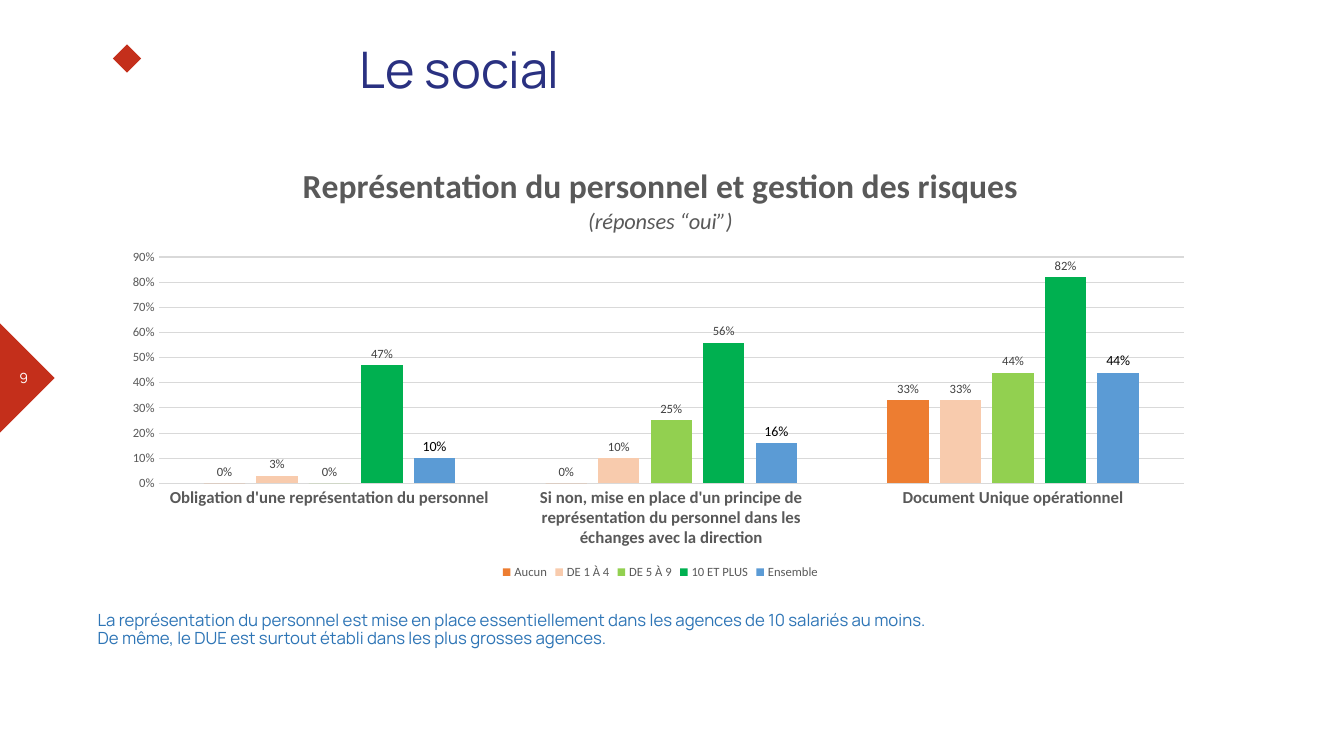
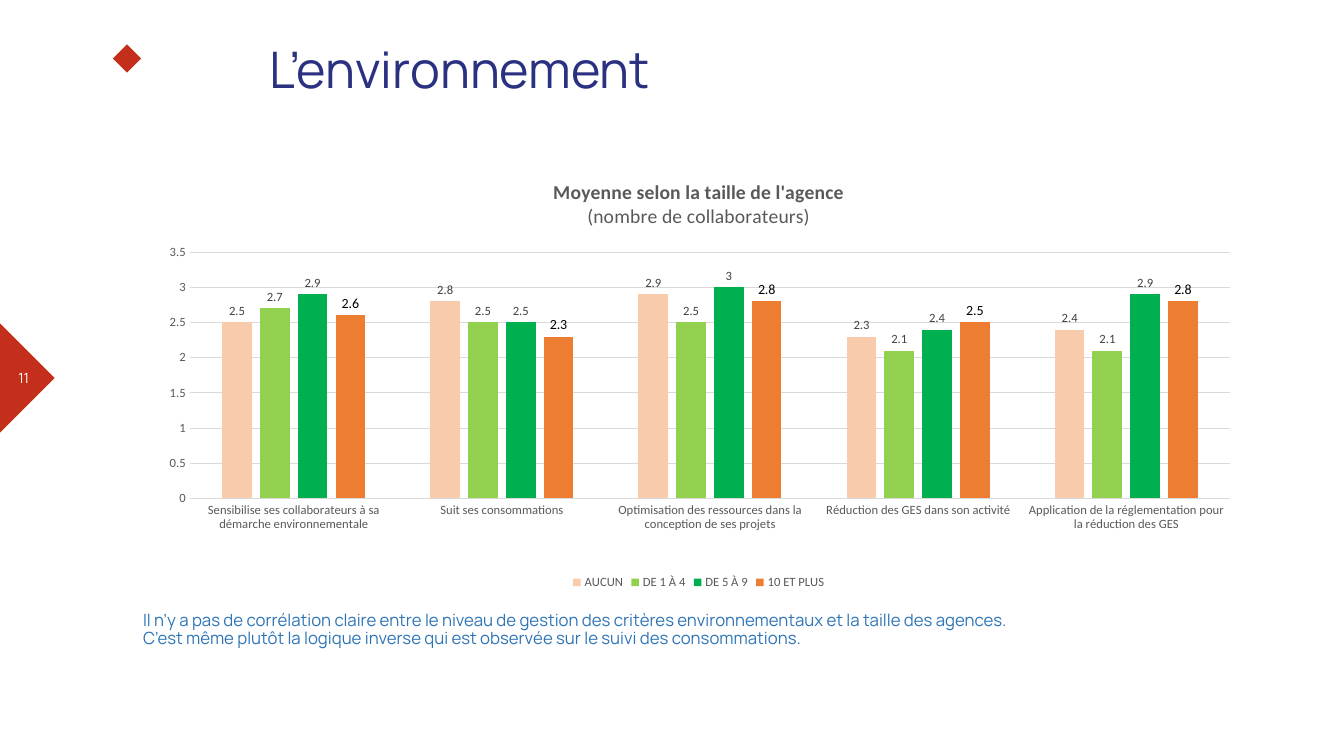
from lxml import etree
from pptx import Presentation
from pptx.chart.data import CategoryChartData
from pptx.dml.color import RGBColor
from pptx.enum.chart import (XL_CHART_TYPE, XL_LABEL_POSITION as LABEL,
                             XL_LEGEND_POSITION as LEGEND, XL_TICK_MARK as TICK)
from pptx.enum.shapes import MSO_SHAPE as SHAPE
from pptx.enum.text import MSO_ANCHOR as ANCHOR, PP_ALIGN as ALIGN
from pptx.oxml.ns import qn
from pptx.util import Inches, Pt

C = {"red": "C42F1B", "navy": "2A3181", "blue": "2E75B6", "white": "FFFFFF",
     "grey": "595959", "label": "404040", "rule": "D9D9D9", "black": "000000",
     "orange": "ED7D31", "peach": "F8CBAD", "lime": "92D050", "green": "00B050",
     "sky": "5B9BD5"}
TEXT_FONT, CHART_FONT = "Manrope", "Calibri"

TITLE = {"size": 36, "color": "navy"}
COMMENT = {"size": 12, "color": "blue"}
NUMBER = {"size": 10, "color": "white"}
SMALL = {"size": 9, "color": "grey", "name": CHART_FONT, "bold": False}
SERIES_LABEL = SMALL | {"color": "label"}
TOTAL_LABEL = SMALL | {"size": 10, "color": "black"}


def rgb(name):
    return RGBColor.from_string(C[name])


def set_font(font, fmt):
    for key, value in ({"name": TEXT_FONT} | fmt).items():
        if key == "color":
            font.color.rgb = rgb(value)
        else:
            setattr(font, key, Pt(value) if key == "size" else value)


def add_text(slide, box, lines, fmt, align=ALIGN.LEFT, anchor=ANCHOR.TOP,
             inset=None, spacing=0.9):
    tf = slide.shapes.add_textbox(*map(Inches, box)).text_frame
    tf.word_wrap = True
    tf.vertical_anchor = anchor
    if inset is not None:
        for side in ("left", "top", "right", "bottom"):
            setattr(tf, f"margin_{side}", Inches(inset))
    for i, line in enumerate(lines):
        p = tf.add_paragraph() if i else tf.paragraphs[0]
        p.alignment, p.line_spacing = align, spacing
        r = p.add_run()
        r.text = line
        set_font(r.font, fmt)


def add_mark(slide, shape, box, rotation=0):
    sp = slide.shapes.add_shape(shape, *map(Inches, box))
    sp.shadow.inherit = False
    sp.rotation = rotation
    sp.fill.solid()
    sp.fill.fore_color.rgb = rgb("red")
    sp.line.fill.background()


def add_frame(prs, title, number):
    """Add a slide with its red marks, page number and title."""
    slide = prs.slides.add_slide(prs.slide_layouts[6])
    add_mark(slide, SHAPE.RIGHT_TRIANGLE, (-0.4, 3.36, 0.78, 0.78), 225)
    add_mark(slide, SHAPE.DIAMOND, (1.12, 0.44, 0.28, 0.28))
    add_text(slide, (-0.01, 3.54, 0.49, 0.42), [str(number)], NUMBER,
             ALIGN.CENTER, ANCHOR.MIDDLE, spacing=1)
    add_text(slide, (1.53, 0.45, 6.06, 0.62), [title], TITLE, ALIGN.CENTER, inset=0)
    return slide


def set_plot_area(chart, plot):
    """Fix the inner plot area as fractions of the chart: x, y, w, h."""
    area = chart.element.find(".//" + qn("c:plotArea"))
    layout = area.find(qn("c:layout"))
    if layout is None:
        layout = etree.Element(qn("c:layout"))
        area.insert(0, layout)
    manual = etree.SubElement(layout, qn("c:manualLayout"))
    values = [("layoutTarget", "inner"), ("xMode", "edge"), ("yMode", "edge")]
    for tag, value in values + list(zip("xywh", plot)):
        etree.SubElement(manual, qn(f"c:{tag}")).set("val", str(value))


def style_axes(chart, top, step, number_format, category_format):
    cat, val = chart.category_axis, chart.value_axis
    for axis, fmt in ((cat, category_format), (val, SMALL)):
        axis.major_tick_mark = axis.minor_tick_mark = TICK.NONE
        set_font(axis.tick_labels.font, fmt)
    val.minimum_scale, val.maximum_scale, val.major_unit = 0, top, step
    val.has_major_gridlines = True
    for line in (cat.format.line, val.major_gridlines.format.line):
        line.color.rgb = rgb("rule")
        line.width = Pt(0.75)
    val.format.line.fill.background()
    val.tick_labels.number_format = number_format
    val.tick_labels.number_format_is_linked = False


def style_series(chart, colors, number_format):
    """Colour the columns; the last series has larger black labels."""
    plot = chart.plots[0]
    plot.gap_width, plot.overlap, plot.vary_by_categories = 219, -27, False
    for series, color in zip(plot.series, colors):
        series.format.fill.solid()
        series.format.fill.fore_color.rgb = rgb(color)
        labels = series.data_labels
        labels.show_value = True
        labels.position = LABEL.OUTSIDE_END
        labels.number_format = number_format
        labels.number_format_is_linked = False
        set_font(labels.font, TOTAL_LABEL if color == colors[-1] else SERIES_LABEL)


def add_columns(slide, box, title, categories, series, plot, top, step,
                number_format="General", category_format=SMALL):
    data = CategoryChartData(number_format=number_format)
    data.categories = categories
    for name, _, values in series:
        data.add_series(name, values)
    chart = slide.shapes.add_chart(XL_CHART_TYPE.COLUMN_CLUSTERED,
                                   *map(Inches, box), data).chart
    set_font(chart.font, TOTAL_LABEL)

    chart.has_title = True
    tf = chart.chart_title.text_frame
    chart.chart_title.include_in_layout = False
    for i, (line, fmt) in enumerate(title):
        p = tf.add_paragraph() if i else tf.paragraphs[0]
        r = p.add_run()
        r.text = line
        set_font(r.font, SMALL | fmt)

    chart.has_legend = True
    chart.legend.position = LEGEND.BOTTOM
    chart.legend.include_in_layout = False
    set_font(chart.legend.font, SMALL)

    set_plot_area(chart, plot)
    style_axes(chart, top, step, number_format, category_format)
    style_series(chart, [color for _, color, _ in series], number_format)


def add_social_slide(prs):
    slide = add_frame(prs, "Le social", 9)
    add_columns(
        slide, (1.14, 1.47, 10.82, 4.32),
        [("Représentation du personnel et gestion des risques", {"size": 24, "bold": True}),
         ("(réponses “oui”)", {"size": 16, "italic": True})],
        ["Obligation d'une représentation du personnel",
         "Si non, mise en place d'un principe de représentation du personnel "
         "dans les échanges avec la direction",
         "Document Unique opérationnel"],
        [("Aucun", "orange", (0, 0, 0.33)),
         ("DE 1 À 4", "peach", (0.03, 0.1, 0.33)),
         ("DE 5 À 9", "lime", (0, 0.25, 0.44)),
         ("10 ET PLUS", "green", (0.47, 0.56, 0.82)),
         ("Ensemble", "sky", (0.1, 0.16, 0.44))],
        plot=(0.04, 0.25, 0.94, 0.52), top=0.9, step=0.1, number_format="0%",
        category_format=SMALL | {"size": 12, "bold": True})
    add_text(slide, (0.87, 6.02, 12.07, 0.5),
             ["La représentation du personnel est mise en place essentiellement "
              "dans les agences de 10 salariés au moins.",
              "De même, le DUE est surtout établi dans les plus grosses agences."],
             COMMENT)


def add_environment_slide(prs):
    slide = add_frame(prs, "L’environnement", 11)
    add_columns(
        slide, (1.32, 1.6, 11.22, 4.29),
        [("Moyenne selon la taille de l'agence", {"size": 14, "bold": True}),
         ("(nombre de collaborateurs)", {"size": 14})],
        ["Sensibilise ses collaborateurs à sa démarche environnementale",
         "Suit ses consommations",
         "Optimisation des ressources dans la conception de ses projets",
         "Réduction des GES dans son activité",
         "Application de la réglementation pour la réduction des GES"],
        [("AUCUN", "peach", (2.5, 2.8, 2.9, 2.3, 2.4)),
         ("DE 1 À 4", "lime", (2.7, 2.5, 2.5, 2.1, 2.1)),
         ("DE 5 À 9", "green", (2.9, 2.5, 3, 2.4, 2.9)),
         ("10 ET PLUS", "orange", (2.6, 2.3, 2.8, 2.5, 2.8))],
        plot=(0.05, 0.21, 0.92, 0.57), top=3.5, step=0.5)
    add_text(slide, (1.32, 6.02, 11.61, 0.5),
             ["Il n’y a pas de corrélation claire entre le niveau de gestion des "
              "critères environnementaux et la taille des agences.",
              "C’est même plutôt la logique inverse qui est observée sur le suivi "
              "des consommations."],
             COMMENT)


def main():
    prs = Presentation()
    prs.slide_width, prs.slide_height = Inches(13.33), Inches(7.5)
    add_social_slide(prs)
    add_environment_slide(prs)
    prs.save("out.pptx")


if __name__ == "__main__":
    main()
